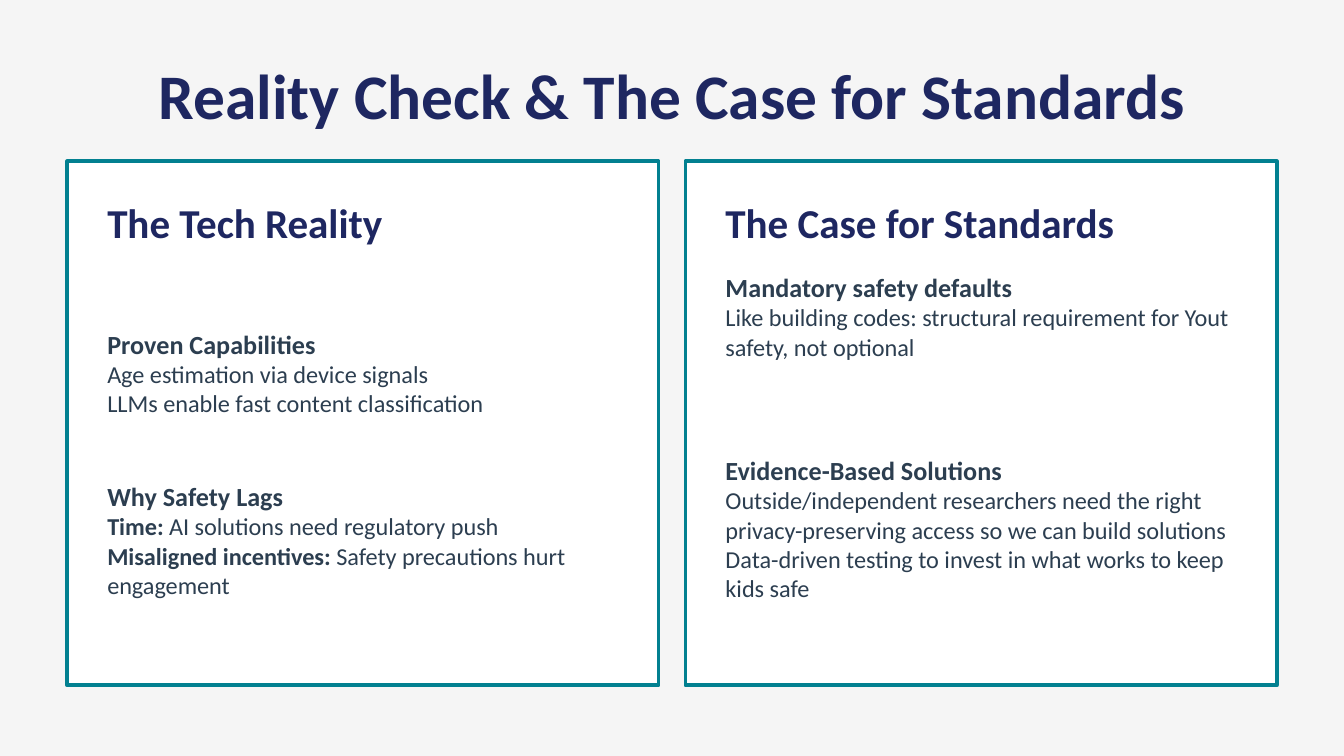
from pptx import Presentation
from pptx.dml.color import RGBColor
from pptx.enum.shapes import MSO_SHAPE
from pptx.enum.text import MSO_ANCHOR, PP_ALIGN
from pptx.util import Inches, Pt

RECTANGLE = MSO_SHAPE.RECTANGLE
MIDDLE = MSO_ANCHOR.MIDDLE
LEFT, CENTER = PP_ALIGN.LEFT, PP_ALIGN.CENTER

COLORS = {"page": "F5F5F5", "card": "FFFFFF", "border": "028090",
          "heading": "1E2761", "body": "2C3E50"}
FONT = "Calibri"
TITLE = "Reality Check & The Case for Standards"
CARDS = [
    {"heading": "The Tech Reality", "body_height": 2.9, "section_gap": 33.5, "sections": [
        ("Proven Capabilities", [
            ("", "Age estimation via device signals"),
            ("", "LLMs enable fast content classification")]),
        ("Why Safety Lags", [
            ("Time: ", "AI solutions need regulatory push"),
            ("Misaligned incentives: ", "Safety precautions hurt engagement")]),
    ]},
    {"heading": "The Case for Standards", "body_height": 2.5, "section_gap": 50, "sections": [
        ("Mandatory safety defaults", [
            ("", "Like building codes: structural requirement for Yout safety, not optional")]),
        ("Evidence-Based Solutions", [
            ("", "Outside/independent researchers need the right "
                 "privacy-preserving access so we can build solutions"),
            ("", "Data-driven testing to invest in what works to keep kids safe")]),
    ]},
]

PAGE_WIDTH = 10
PAGE_HEIGHT = PAGE_WIDTH * 9 / 16
MARGIN, GUTTER, PADDING = 0.5, 0.2, 0.2
CARD_TOP, CARD_HEIGHT = 1.2, 3.9
HEADING_HEIGHT, BODY_OFFSET = 0.5, 0.8
CARD_WIDTH = (PAGE_WIDTH - 2 * MARGIN - GUTTER * (len(CARDS) - 1)) / len(CARDS)


def color(name):
    return RGBColor.from_string(COLORS[name])


def add_span(para, text, size, tone="body", bold=False):
    span = para.add_run()
    span.text = text
    span.font.name = FONT
    span.font.size = Pt(size)
    span.font.bold = bold
    span.font.color.rgb = color(tone)


def write_paragraph(frame, spans, size, tone="body", align=LEFT, before=0):
    para = frame.paragraphs[0]
    if para.runs:
        para = frame.add_paragraph()
    para.alignment = align
    para.space_before = Pt(before)
    for text, bold in spans:
        if text:
            add_span(para, text, size, tone, bold)


def prepare_frame(box):
    frame = box.text_frame
    frame.word_wrap = True
    frame.vertical_anchor = MIDDLE
    return frame


def add_box(page, left, top, width, height):
    return prepare_frame(page.shapes.add_textbox(
        Inches(left), Inches(top), Inches(width), Inches(height)))


def add_card(page, left, card):
    panel = page.shapes.add_shape(RECTANGLE, Inches(left), Inches(CARD_TOP),
                                  Inches(CARD_WIDTH), Inches(CARD_HEIGHT))
    panel.shadow.inherit = False
    panel.fill.solid()
    panel.fill.fore_color.rgb = color("card")
    panel.line.color.rgb = color("border")
    panel.line.width = Pt(2)

    text_left, text_width = left + PADDING, CARD_WIDTH - 2 * PADDING
    heading = add_box(page, text_left, CARD_TOP + PADDING, text_width, HEADING_HEIGHT)
    write_paragraph(heading, [(card["heading"], True)], 22, tone="heading")

    body = add_box(page, text_left, CARD_TOP + BODY_OFFSET, text_width, card["body_height"])
    for index, (label, points) in enumerate(card["sections"]):
        write_paragraph(body, [(label, True)], 14,
                        before=card["section_gap"] if index else 0)
        for lead, text in points:
            write_paragraph(body, [(lead, True), (text, False)], 13)


def main():
    deck = Presentation()
    deck.slide_width, deck.slide_height = Inches(PAGE_WIDTH), Inches(PAGE_HEIGHT)
    page = deck.slides.add_slide(deck.slide_layouts[5])
    page.background.fill.solid()
    page.background.fill.fore_color.rgb = color("page")

    title = page.shapes.title
    title.left, title.top = Inches(MARGIN), Inches(0.4)
    title.width, title.height = Inches(PAGE_WIDTH - 2 * MARGIN), Inches(0.6)
    write_paragraph(prepare_frame(title), [(TITLE, True)], 34, tone="heading", align=CENTER)

    for index, card in enumerate(CARDS):
        add_card(page, MARGIN + index * (CARD_WIDTH + GUTTER), card)
    deck.save("out.pptx")


if __name__ == "__main__":
    main()
